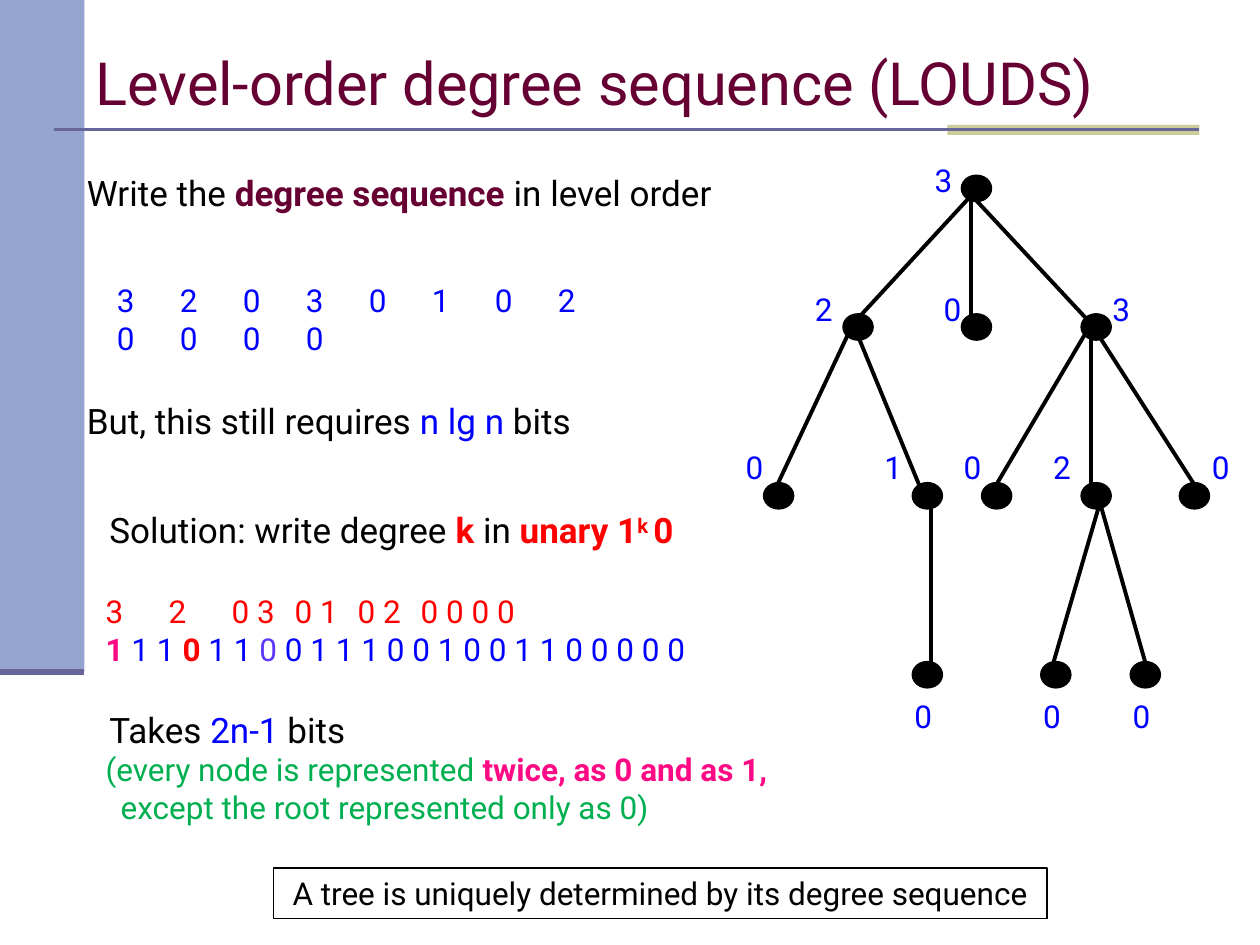
from lxml import etree
from pptx import Presentation
from pptx.dml.color import RGBColor
from pptx.enum.shapes import MSO_CONNECTOR, MSO_SHAPE
from pptx.enum.text import MSO_ANCHOR, PP_ALIGN
from pptx.oxml.ns import qn
from pptx.util import Inches, Pt

STRAIGHT = MSO_CONNECTOR.STRAIGHT
RECTANGLE, OVAL = MSO_SHAPE.RECTANGLE, MSO_SHAPE.OVAL
MIDDLE, TOP = MSO_ANCHOR.MIDDLE, MSO_ANCHOR.TOP
LEFT, CENTER = PP_ALIGN.LEFT, PP_ALIGN.CENTER

FONT = "Roboto"
COLORS = {
    "black": "000000", "plum": "660033", "blue": "0000FF", "red": "FF0000",
    "pink": "FF0A85", "violet": "5C37FB", "green": "00B050",
    "side": "95A3D1", "rule": "666699", "accent": "CCCC99",
}

# A run is (text, colour, style); a paragraph is a dict with its runs.
TITLE = [{"size": 34, "runs": [("Level-order degree sequence (LOUDS)", "plum", "")]}]
INTRO = [{"size": 20, "runs": [
    ("Write the ", "black", ""), ("degree sequence ", "plum", "bold"),
    ("in level order", "black", "")]}]
DEGREES = "320301020000"
DEGREE_STEP = 0.264
SEQUENCE = [{
    "size": 18, "runs": [("\t".join(DEGREES), "blue", "")],
    "tabs": [DEGREE_STEP * i for i in range(1, len(DEGREES))]}]
COST = [{"size": 20, "runs": [
    ("But, this still requires ", "black", ""), ("n lg n ", "blue", ""),
    ("bits", "black", "")]}]
SOLUTION = [
    {"size": 20, "indent": 0.03, "runs": [
        ("Solution: write degree ", "black", ""), ("k", "red", "bold"),
        (" in ", "black", ""), ("unary 1", "red", "bold"),
        ("k ", "red", "bold super"), ("0", "red", "bold")]},
    {"size": 18, "before": 23.4, "tabs": [0.76, 1.27, 2.17, 2.76, 3.54],
     "runs": [("3\t2\t0 3\t0 1\t0 2\t0 0 0 0", "red", "")]},
    {"size": 18, "runs": [
        ("1", "pink", "bold"), (" 1 1 ", "blue", ""), ("0", "red", "bold"),
        (" 1 1 ", "blue", ""), ("0 ", "violet", ""),
        ("0 1 1 1 0 0 1 0 0 1 1 0 0 0 0 0", "blue", "")]},
    {"size": 20, "indent": 0.03, "before": 23.4, "runs": [
        ("Takes ", "black", ""), ("2n-1", "blue", ""), (" bits", "black", "")]},
    {"size": 18, "runs": [
        ("(every node is represented ", "green", ""),
        ("twice, as 0 and as 1,", "pink", "bold")]},
    {"size": 18, "indent": 0.12, "runs": [
        ("except the root represented only as 0)", "green", "")]},
]
CONCLUSION = [{"size": 18, "align": CENTER, "runs": [
    ("A tree is uniquely determined by its degree sequence", "black", "")]}]

TEXTS = [  # paragraphs, (left, top, width, height), anchor
    (TITLE, (0.66, 0.25, 8.5, 0.79), MIDDLE),
    (INTRO, (0.59, 1.31, 5.51, 0.44), TOP),
    (SEQUENCE, (0.83, 2.18, 4.07, 0.4), TOP),
    (COST, (0.59, 3.12, 4.69, 0.43), TOP),
    (SOLUTION, (0.74, 3.99, 7.13, 2.66), TOP),
]

NODE_SIZE = (0.24, 0.21)
LABEL_SIZE = (0.36, 0.4)
LEVELS = [  # top of the nodes, label offset down, [(left, label offset right, degree)]
    (1.39, -0.16, [(7.63, -0.31, 3)]),
    (2.49, -0.24, [(6.69, -0.32, 2), (7.63, -0.24, 0), (8.58, 0.15, 3)]),
    (3.83, -0.32, [(6.06, -0.24, 0), (7.24, -0.32, 1), (7.79, -0.24, 0),
                   (8.58, -0.32, 2), (9.36, 0.16, 0)]),
    (5.25, 0.23, [(7.24, -0.08, 0), (8.26, -0.08, 0), (8.97, -0.08, 0)]),
]
# Edges leave and reach a node at these offsets from its corner, by level-order number.
USUAL = (0.08, 0.08)
LEAVE = {0: (0.08, 0.16), 5: (0.15, 0.08), 7: (0.15, 0.16)}
REACH = {8: (0.16, 0.08), 9: (0.15, 0.08), 11: (0.16, 0.15)}


def add_text(frame, paragraphs, anchor):
    frame.word_wrap = True
    frame.vertical_anchor = anchor
    for i, content in enumerate(paragraphs):
        paragraph = frame.paragraphs[0] if i == 0 else frame.add_paragraph()
        paragraph.alignment = content.get("align", LEFT)
        paragraph.space_before = Pt(content.get("before", 0))
        paragraph.font.name = FONT
        paragraph.font.size = Pt(content["size"])
        properties = paragraph._p.get_or_add_pPr()
        properties.set("marL", str(Inches(content.get("indent", 0))))
        properties.set("indent", "0")
        if "tabs" in content:
            stops = etree.Element(qn("a:tabLst"))
            for position in content["tabs"]:
                etree.SubElement(stops, qn("a:tab"), pos=str(Inches(position)), algn="l")
            properties.find(qn("a:defRPr")).addprevious(stops)
        for text, color, style in content["runs"]:
            run = paragraph.add_run()
            run.text = text
            run.font.color.rgb = RGBColor.from_string(COLORS[color])
            run.font.bold = "bold" in style
            if "super" in style:
                run._r.get_or_add_rPr().set("baseline", "30000")


def add_text_box(slide, paragraphs, box, anchor=TOP):
    frame = slide.shapes.add_textbox(*map(Inches, box)).text_frame
    add_text(frame, paragraphs, anchor)


def add_shape(slide, preset, box, fill=None, line=None):
    shape = slide.shapes.add_shape(preset, *map(Inches, box))
    shape.shadow.inherit = False
    if fill:
        shape.fill.solid()
        shape.fill.fore_color.rgb = RGBColor.from_string(COLORS[fill])
    else:
        shape.fill.background()
    if line:
        shape.line.color.rgb = RGBColor.from_string(COLORS[line])
        shape.line.width = Pt(0.75)
    else:
        shape.line.fill.background()
    return shape


def add_line(slide, start, end, color, width):
    line = slide.shapes.add_connector(STRAIGHT, *map(Inches, (*start, *end)))
    line.line.color.rgb = RGBColor.from_string(COLORS[color])
    line.line.width = Pt(width)
    etree.SubElement(line._element.spPr, qn("a:effectLst"))


def shifted(point, offset):
    return point[0] + offset[0], point[1] + offset[1]


def add_tree(slide):
    """Draw the tree; the degrees in level order tell which nodes are children."""
    nodes = [((left, top), (dx, dy), degree)
             for top, dy, level in LEVELS for left, dx, degree in level]
    child = 1
    for number, (corner, _, degree) in enumerate(nodes):
        start = shifted(corner, LEAVE.get(number, USUAL))
        for _ in range(degree):
            end = shifted(nodes[child][0], REACH.get(child, USUAL))
            add_line(slide, start, end, "black", 2.25)
            child += 1
    for corner, label_offset, degree in nodes:
        add_shape(slide, OVAL, (*corner, *NODE_SIZE), "black", "black")
        label = [{"size": 18, "runs": [(str(degree), "blue", "")]}]
        add_text_box(slide, label, (*shifted(corner, label_offset), *LABEL_SIZE))


def main():
    deck = Presentation()
    deck.slide_width, deck.slide_height = Inches(10), Inches(7.5)
    slide = deck.slides.add_slide(deck.slide_layouts[6])

    add_shape(slide, RECTANGLE, (0, 0, 0.67, 5.33), "side")
    add_shape(slide, RECTANGLE, (7.52, 0.99, 2, 0.08), "accent")
    add_line(slide, (0.43, 1.03), (9.52, 1.03), "rule", 1.5)
    add_line(slide, (0, 5.33), (0.67, 5.33), "rule", 3.5)
    for paragraphs, box, anchor in TEXTS:
        add_text_box(slide, paragraphs, box, anchor)
    add_tree(slide)
    conclusion = add_shape(slide, RECTANGLE, (2.17, 6.89, 6.14, 0.4), line="black")
    add_text(conclusion.text_frame, CONCLUSION, MIDDLE)
    deck.save("out.pptx")


if __name__ == "__main__":
    main()
